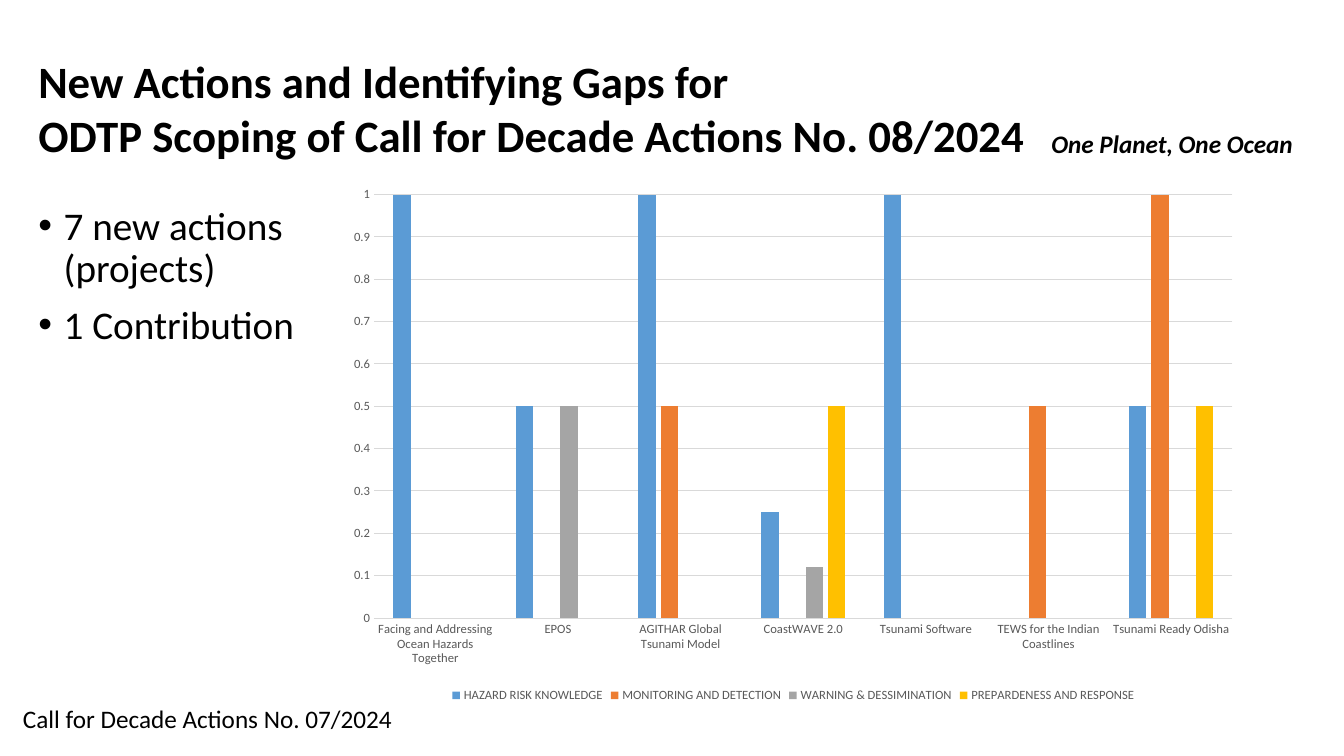
from lxml.etree import SubElement
from pptx import Presentation
from pptx.chart.data import CategoryChartData
from pptx.dml.color import RGBColor
from pptx.enum.chart import XL_CHART_TYPE, XL_LEGEND_POSITION, XL_TICK_MARK
from pptx.enum.text import MSO_ANCHOR, MSO_AUTO_SIZE, PP_ALIGN
from pptx.oxml.ns import qn
from pptx.util import Cm, Pt

BLACK = RGBColor(0x00, 0x00, 0x00)
GREY = RGBColor(0x59, 0x59, 0x59)
GRID = RGBColor(0xD9, 0xD9, 0xD9)
BLUE = RGBColor(0x5B, 0x9B, 0xD5)
ORANGE = RGBColor(0xED, 0x7D, 0x31)
SILVER = RGBColor(0xA5, 0xA5, 0xA5)
YELLOW = RGBColor(0xFF, 0xC0, 0x00)

ACTIONS = [
    "Facing and Addressing Ocean Hazards Together",
    "EPOS",
    "AGITHAR Global Tsunami Model",
    "CoastWAVE 2.0",
    "Tsunami Software",
    "TEWS for the Indian Coastlines",
    "Tsunami Ready Odisha",
]
SERIES = [
    ("HAZARD RISK KNOWLEDGE", BLUE, [1, 0.5, 1, 0.25, 1, None, 0.5]),
    ("MONITORING AND DETECTION", ORANGE, [None, None, 0.5, None, None, 0.5, 1]),
    ("WARNING & DESSIMINATION", SILVER, [None, 0.5, None, 0.12, None, None, None]),
    ("PREPARDENESS AND RESPONSE", YELLOW, [None, None, None, 0.5, None, None, 0.5]),
]


def style_font(font, size, color=BLACK, bold=False, italic=False):
    font.name = "Calibri"
    font.size = Pt(size)
    font.bold = bold
    font.italic = italic
    font.color.rgb = color


def write(p, text, align=PP_ALIGN.LEFT, **fmt):
    p.text = text
    p.alignment = align
    for r in p.runs:
        style_font(r.font, **fmt)


class SlideBuilder:
    def __init__(self, prs):
        self.s = prs.slides.add_slide(prs.slide_layouts[1])

    def place(self, sp, left, top, width, height):
        sp.left, sp.top = Cm(left), Cm(top)
        sp.width, sp.height = Cm(width), Cm(height)

    def title(self, text, *box):
        sp = self.s.shapes.title
        self.place(sp, *box)
        tf = sp.text_frame
        tf.auto_size = MSO_AUTO_SIZE.NONE
        tf.vertical_anchor = MSO_ANCHOR.TOP
        write(tf.paragraphs[0], text, size=32, bold=True)

    def bullets(self, items, *box):
        sp = self.s.placeholders[1]
        self.place(sp, *box)
        tf = sp.text_frame
        tf.auto_size = MSO_AUTO_SIZE.NONE
        for i, item in enumerate(items):
            p = tf.add_paragraph() if i else tf.paragraphs[0]
            write(p, item, size=28)
            p.line_spacing = 0.9
            p.space_before = Pt(10)
            pPr = p._p.get_or_add_pPr()
            pPr.set("marL", str(Cm(0.64)))
            pPr.set("indent", str(-Cm(0.64)))
            SubElement(pPr, qn("a:buFont")).set("typeface", "Arial")
            SubElement(pPr, qn("a:buChar")).set("char", "•")

    def text(self, text, *box, wrap=False, **fmt):
        tf = self.s.shapes.add_textbox(*map(Cm, box)).text_frame
        tf.word_wrap = wrap
        write(tf.paragraphs[0], text, **fmt)

    def chart(self, categories, series, *box):
        data = CategoryChartData()
        data.categories = categories
        for name, _, values in series:
            data.add_series(name, values)
        chart = self.s.shapes.add_chart(
            XL_CHART_TYPE.COLUMN_CLUSTERED, *map(Cm, box), data).chart
        style_font(chart.font, 10)
        chart.has_title = False
        chart.has_legend = True
        chart.legend.position = XL_LEGEND_POSITION.BOTTOM
        chart.legend.include_in_layout = False
        style_font(chart.legend.font, 9, GREY)

        plot = chart.plots[0]
        plot.gap_width = 219
        plot.overlap = -27
        plot.vary_by_categories = False
        for bars, (_, color, _) in zip(plot.series, series):
            bars.format.fill.solid()
            bars.format.fill.fore_color.rgb = color
            bars.invert_if_negative = False

        cat, val = chart.category_axis, chart.value_axis
        for axis in (cat, val):
            axis.major_tick_mark = XL_TICK_MARK.NONE
            axis.minor_tick_mark = XL_TICK_MARK.NONE
            style_font(axis.tick_labels.font, 9, GREY)
        val.minimum_scale, val.maximum_scale = 0, 1
        val.major_unit = 0.1
        val.has_major_gridlines = True
        val.format.line.fill.background()
        for line in (cat.format.line, val.major_gridlines.format.line):
            line.color.rgb = GRID
            line.width = Pt(0.75)


def main():
    prs = Presentation()
    prs.slide_width, prs.slide_height = Cm(33.87), Cm(19.05)
    b = SlideBuilder(prs)
    b.text("One Planet, One Ocean", 25.22, 3.12, 8.64, 1.02, wrap=True,
           align=PP_ALIGN.CENTER, size=18, bold=True, italic=True)
    b.bullets(["7 new actions (projects)", "1 Contribution"],
              0.71, 5.08, 7.04, 12.09)
    b.chart(ACTIONS, SERIES, 8.46, 4.45, 23.06, 13.36)
    b.title("New Actions and Identifying Gaps for\n"
            "ODTP Scoping of Call for Decade Actions No. 08/2024",
            0.71, 1.22, 25.86, 3)
    b.text("Call for Decade Actions No. 07/2024", 0.33, 17.6, 9.93, 1.02, size=18)
    prs.save("out.pptx")


if __name__ == "__main__":
    main()
